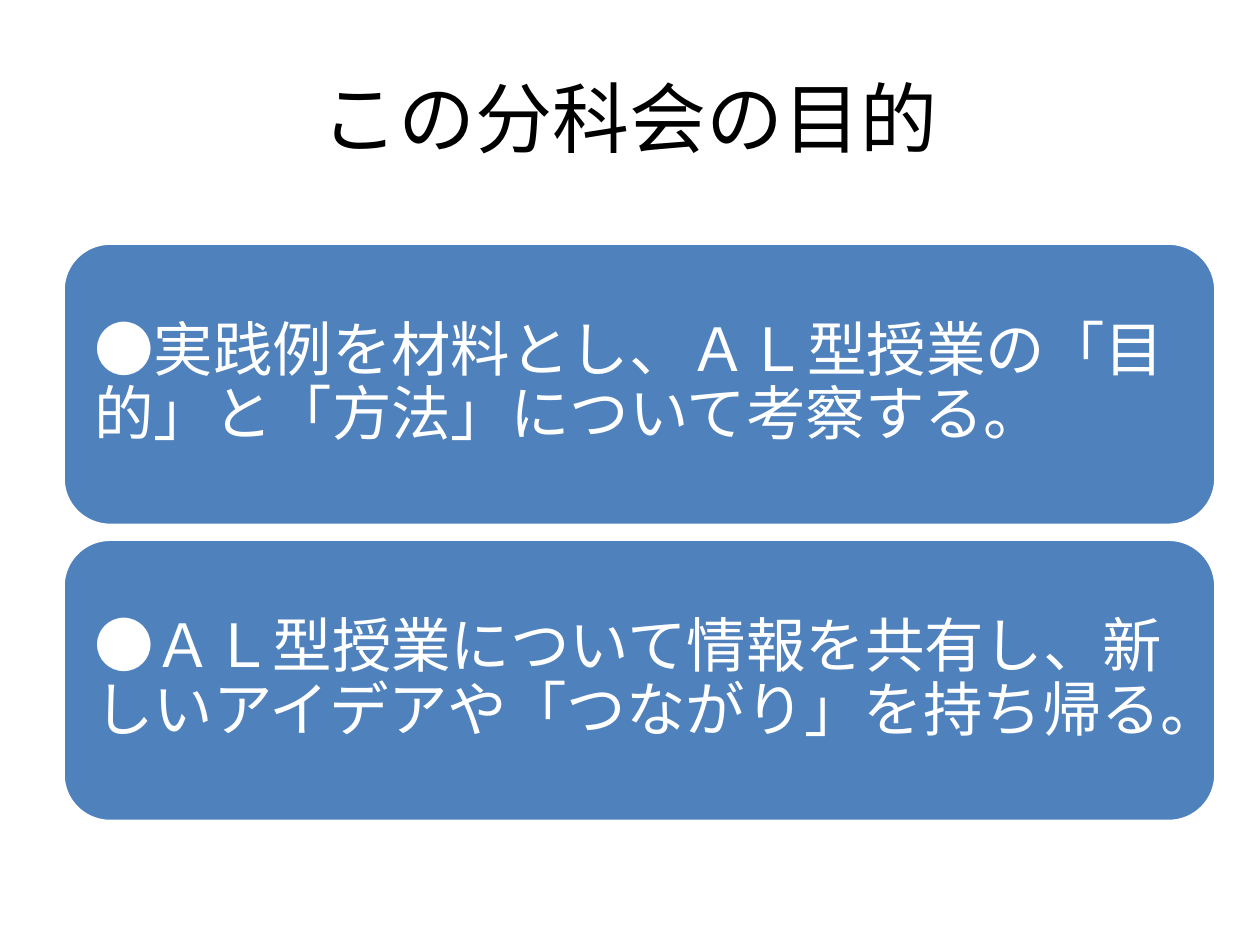
from pptx import Presentation
from pptx.dml.color import RGBColor
from pptx.enum.shapes import MSO_SHAPE
from pptx.enum.text import MSO_ANCHOR, PP_ALIGN
from pptx.util import Inches, Pt

BLACK = RGBColor(0x00, 0x00, 0x00)
WHITE = RGBColor(0xFF, 0xFF, 0xFF)
BLUE = RGBColor(0x4F, 0x81, 0xBD)
FONT = "Lato"

HEADING = "この分科会の目的"
PURPOSES = [
    "●実践例を材料とし、ＡＬ型授業の「目的」と「方法」について考察する。",
    "●ＡＬ型授業について情報を共有し、新しいアイデアや「つながり」を持ち帰る。",
]


def add_run(paragraph, wording, size, color):
    run = paragraph.add_run()
    run.text = wording
    run.font.name = FONT
    run.font.size = Pt(size)
    run.font.color.rgb = color


def place_heading(slide, left, top, width, height):
    heading = slide.shapes.title
    heading.left, heading.top = left, top
    heading.width, heading.height = width, height
    frame = heading.text_frame
    frame.vertical_anchor = MSO_ANCHOR.MIDDLE
    paragraph = frame.paragraphs[0]
    paragraph.alignment = PP_ALIGN.CENTER
    add_run(paragraph, HEADING, 44, BLACK)


def place_purpose(slide, wording, left, top, width, height):
    panel = slide.shapes.add_shape(
        MSO_SHAPE.ROUNDED_RECTANGLE, left, top, width, height)
    panel.shadow.inherit = False
    panel.fill.solid()
    panel.fill.fore_color.rgb = BLUE
    panel.line.color.rgb = WHITE
    panel.line.width = Pt(2)

    frame = panel.text_frame
    frame.word_wrap = True
    frame.vertical_anchor = MSO_ANCHOR.MIDDLE
    frame.margin_left = frame.margin_right = Inches(0.14)
    frame.margin_top = frame.margin_bottom = Inches(0.14)
    paragraph = frame.paragraphs[0]
    paragraph.alignment = PP_ALIGN.LEFT
    paragraph.line_spacing = 0.9
    paragraph.space_after = Pt(12)
    add_run(paragraph, wording, 34, WHITE)


def place_purposes(slide, left, top, width, height):
    # Equal panels stacked with a fixed gap
    gap = Inches(0.11)
    count = len(PURPOSES)
    panel_height = (height - gap * (count - 1)) // count
    for row, wording in enumerate(PURPOSES):
        place_purpose(slide, wording, left, top + row * (panel_height + gap),
                      width, panel_height)


def main():
    deck = Presentation()
    deck.slide_width, deck.slide_height = Inches(10), Inches(7.5)
    slide = deck.slides.add_slide(deck.slide_layouts[5])
    margin = deck.slide_width // 20

    # Title
    place_heading(slide, margin, Inches(0.3),
                  deck.slide_width - 2 * margin, deck.slide_height // 6)
    # Purposes of the session
    place_purposes(slide, margin, Inches(1.93), Inches(9.15), Inches(4.59))

    deck.save("out.pptx")


if __name__ == "__main__":
    main()
